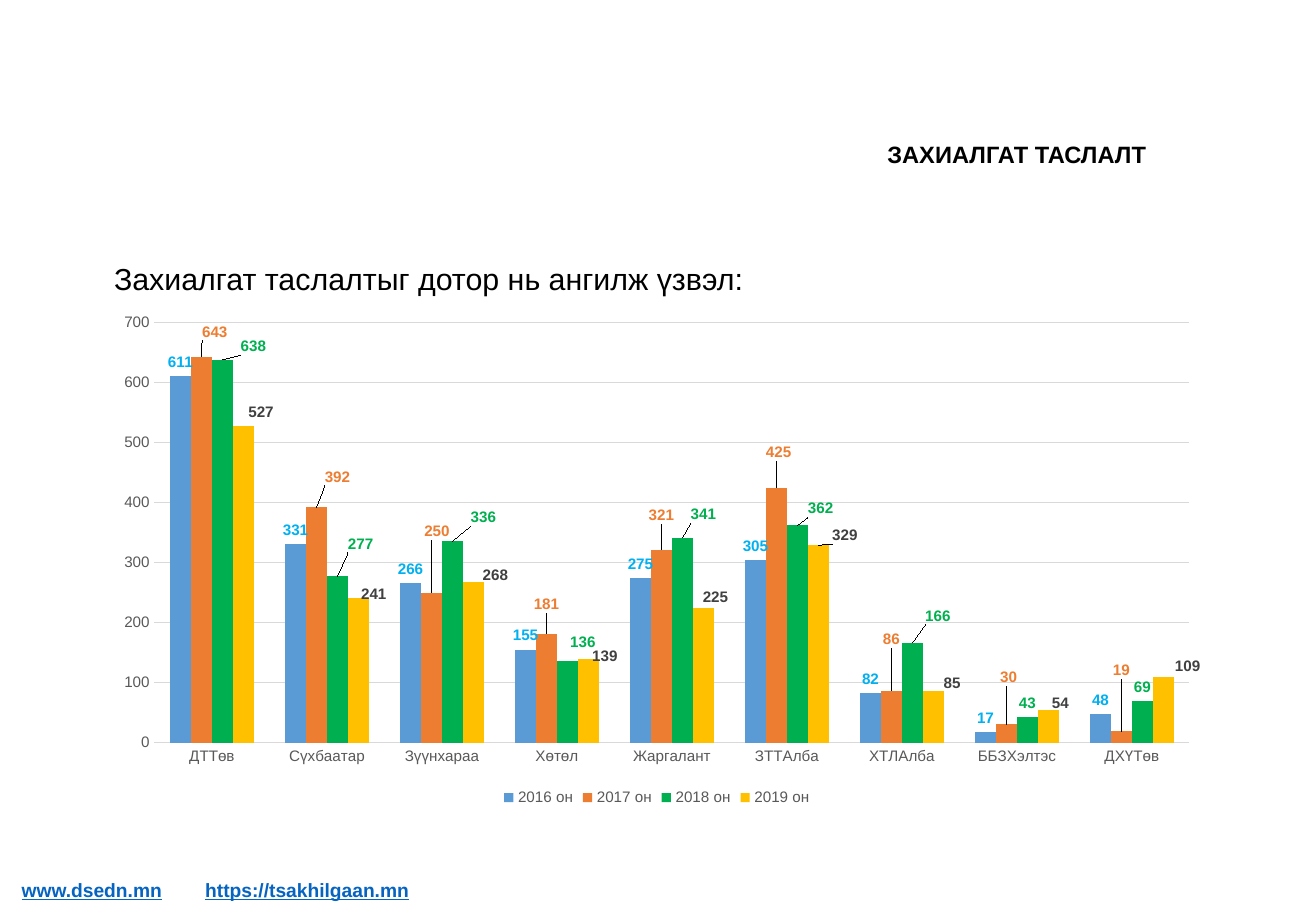
import pptx
import pptx.chart.data
import pptx.dml.color
import pptx.enum.chart
import pptx.enum.text
import pptx.oxml
import pptx.util
from pptx.util import Inches

RGB = pptx.dml.color.RGBColor
WHITE, BLACK = RGB(255, 255, 255), RGB(0, 0, 0)
LINK, GRAY, GRID = RGB(0x05, 0x63, 0xC1), RGB(0x59, 0x59, 0x59), RGB(0xD9, 0xD9, 0xD9)
BLUE, SKY = RGB(0x5B, 0x9B, 0xD5), RGB(0x00, 0xB0, 0xF0)
ORANGE, GREEN = RGB(0xED, 0x7D, 0x31), RGB(0x00, 0xB0, 0x50)
GOLD, DARK = RGB(0xFF, 0xC0, 0x00), RGB(0x40, 0x40, 0x40)
FONT = "Arial"

# Content
TITLE = "ЗАХИАЛГАТ ТАСЛАЛТ "
LEAD = "Захиалгат таслалтыг дотор нь ангилж үзвэл:"
LINKS = [("https://tsakhilgaan.mn", 1.59, 2.03), ("www.dsedn.mn", 0.08, 1.42)]
UNITS = ["ДТТөв", "Сүхбаатар", "Зүүнхараа", "Хөтөл", "Жаргалант",
         "ЗТТАлба", "ХТЛАлба", "ББЗХэлтэс", "ДХҮТөв"]
# Year, values, bar colour, label colour, label shifts in percent of the chart
YEARS = [
    ("2016 он", [611, 331, 266, 155, 275, 305, 82, 17, 48], BLUE, SKY, []),
    ("2017 он", [643, 392, 250, 181, 321, 425, 86, 30, 19], ORANGE, ORANGE,
     [(1.2, -2.2), (1.9, -3.3), (0.5, -9.3), (0, -3.1), (0, -4.1),
      (0.2, -4.3), (0, -7.5), (0.2, -6.5), (0, -9.3)]),
    ("2018 он", [638, 277, 336, 136, 341, 362, 166, 43, 69], GREEN, GREEN,
     [(2.8, 0), (2.1, -3.7), (2.8, -2), (1.4, -1), (1.9, -2),
      (2.1, -0.6), (2.3, -2.6)]),
    ("2019 он", [527, 241, 268, 139, 225, 329, 85, 54, 109], GOLD, DARK,
     [(1.6, 0), (1.4, 2), (2, 1.4), (1.5, 2.2), (1.1, 0.6),
      (2.4, 0.8), (1.7, 1), (1.1, 1.4), (2.2, 0.6)]),
]
LEADER = "2019 он"
C_NS = 'xmlns:c="http://schemas.openxmlformats.org/drawingml/2006/chart"'
C15_NS = 'xmlns:c15="http://schemas.microsoft.com/office/drawing/2012/chart"'

deck = pptx.Presentation()
deck.slide_width, deck.slide_height = Inches(10.83), Inches(7.5)
slide = deck.slides.add_slide(deck.slide_layouts[6])


def style(font, size, color, bold=False):
    font.name, font.size, font.bold = FONT, pptx.util.Pt(size), bold
    font.color.rgb = color


def write(text, box, size, color=BLACK, bold=False, line=False, pad=0.05,
          align=pptx.enum.text.PP_ALIGN.LEFT, space=1, after=0, fill=None):
    shape = slide.shapes.add_textbox(*map(Inches, box))
    if fill is not None:
        shape.fill.solid()
        shape.fill.fore_color.rgb = fill
    frame = shape.text_frame
    frame.word_wrap = True
    frame.margin_top = frame.margin_bottom = Inches(pad)
    para = frame.paragraphs[0]
    para.alignment, para.line_spacing = align, space
    para.space_after = pptx.util.Pt(after)
    run = para.add_run()
    run.text = text
    style(run.font, size, color, bold)
    run.font.underline = line


# Texts
for text, left, width in LINKS:
    write(text, (left, 7.23, width, 0.19), 11.4, LINK, bold=True, line=True,
          pad=0, fill=WHITE)
write(TITLE, (5.96, 1.1, 4.87, 0.34), 14, bold=True,
      align=pptx.enum.text.PP_ALIGN.CENTER)
write(LEAD, (0.84, 2.05, 5.44, 0.45), 18, space=1.15, after=10)

# Chart
kinds = pptx.enum.chart
data = pptx.chart.data.CategoryChartData()
data.categories = UNITS
for name, vals, *_ in YEARS:
    data.add_series(name, vals)
chart = slide.shapes.add_chart(
    kinds.XL_CHART_TYPE.COLUMN_CLUSTERED,
    *map(Inches, (0.84, 2.5, 9.13, 4.18)), data).chart
style(chart.font, 10, BLACK)
chart.has_title = False
chart.has_legend = True
chart.legend.position = kinds.XL_LEGEND_POSITION.BOTTOM
chart.legend.include_in_layout = False
style(chart.legend.font, 9, GRAY)

# Axes
for axis in (chart.category_axis, chart.value_axis):
    axis.major_tick_mark = axis.minor_tick_mark = kinds.XL_TICK_MARK.NONE
    axis.format.line.fill.background()
    style(axis.tick_labels.font, 9, GRAY)
axis = chart.value_axis
axis.minimum_scale, axis.maximum_scale, axis.major_unit = 0, 700, 100
axis.has_major_gridlines = True
axis.major_gridlines.format.line.color.rgb = GRID
axis.major_gridlines.format.line.width = pptx.util.Pt(0.75)

# Bars and their labels
plot = chart.plots[0]
plot.gap_width, plot.overlap, plot.vary_by_categories = 150, 0, False
END = kinds.XL_LABEL_POSITION.OUTSIDE_END
for bars, (name, _, color, ink, shifts) in zip(plot.series, YEARS):
    bars.format.fill.solid()
    bars.format.fill.fore_color.rgb = color
    bars.invert_if_negative = False
    labels = bars.data_labels
    labels.show_value, labels.position = True, END
    style(labels.font, 9, ink, bold=True)
    for i in range(len(shifts)):
        label = bars.points[i].data_label
        style(label.font, 9, ink, bold=True)
        label.position = END
    group = bars._element.find("{*}dLbls")
    for node, (dx, dy) in zip(group.findall("{*}dLbl"), shifts):
        node.find("{*}idx").addnext(pptx.oxml.parse_xml(
            f'<c:layout {C_NS}><c:manualLayout><c:x val="{dx / 100:.3f}"/>'
            f'<c:y val="{dy / 100:.3f}"/></c:manualLayout></c:layout>'))
    if name == LEADER:
        group.append(pptx.oxml.parse_xml(
            f'<c:extLst {C_NS}><c:ext {C15_NS} '
            'uri="{CE6537A1-D6FC-4f65-9D91-7224C49458BB}">'
            '<c15:showLeaderLines val="1"/></c:ext></c:extLst>'))

deck.save("out.pptx")
